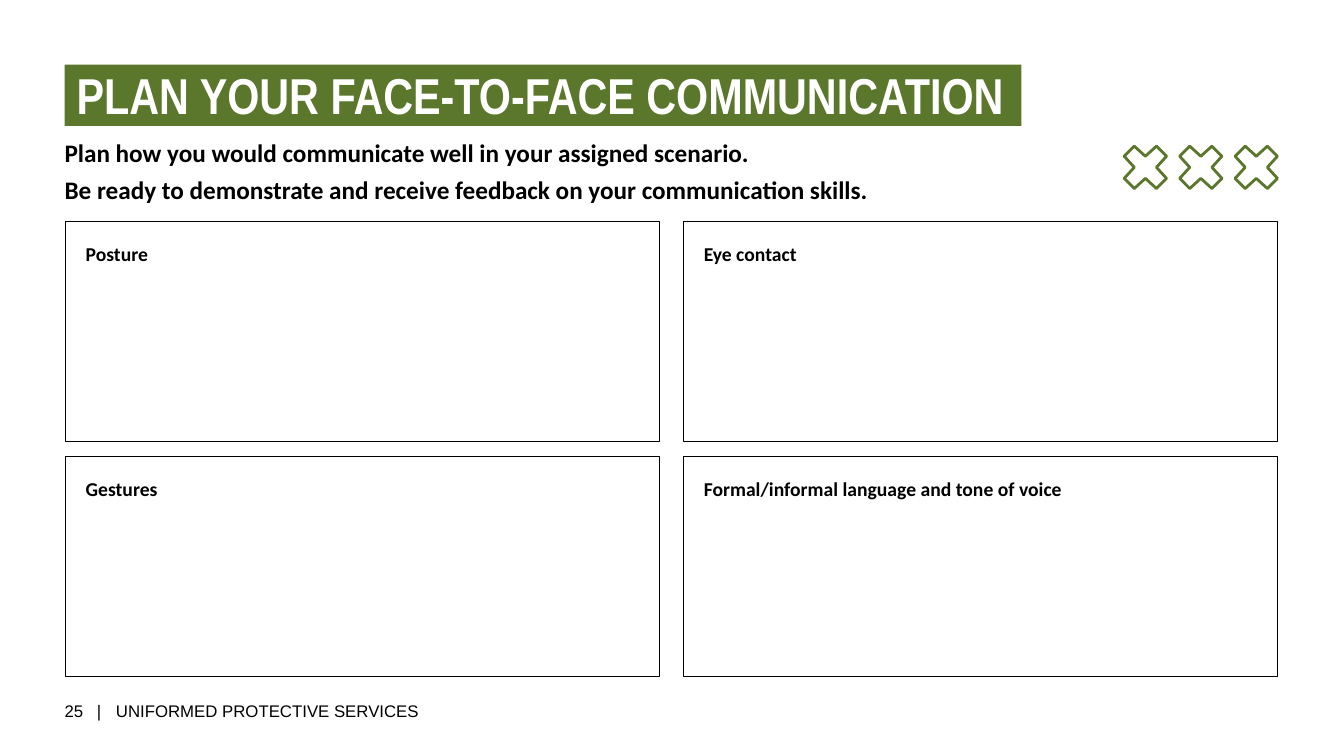
from pptx import Presentation, util as u
from pptx.dml.color import RGBColor
from pptx.enum import shapes, text
from lxml import etree

Inches, Pt = u.Inches, u.Pt
A_NS = "{http://schemas.openxmlformats.org/drawingml/2006/main}"


def colour(hex_code):
    return RGBColor.from_string(hex_code)


class Worksheet:
    GREEN, BLACK, WHITE = "5B772B", "000000", "FFFFFF"
    HEADING, BODY, FOOTER = "Arial Narrow", "Calibri", "Arial"

    def __init__(self, slide):
        self.slide = slide

    def set_text(self, shape, lines, font, size, ink, bold=True, insets=(0, 0, 0, 0),
                 after=0, anchor=text.MSO_ANCHOR.TOP, wrap=True, grow=False, tabs=()):
        frame = shape.text_frame
        frame.word_wrap = wrap
        frame.auto_size = (text.MSO_AUTO_SIZE.SHAPE_TO_FIT_TEXT if grow
                           else text.MSO_AUTO_SIZE.NONE)
        frame.vertical_anchor = anchor
        (frame.margin_left, frame.margin_top,
         frame.margin_right, frame.margin_bottom) = map(Inches, insets)
        for i, line in enumerate(lines):
            para = frame.add_paragraph() if i else frame.paragraphs[0]
            para.text = line
            para.alignment = text.PP_ALIGN.LEFT
            para.space_after = Pt(after)
            if tabs:
                stops = etree.SubElement(para._p.get_or_add_pPr(), A_NS + "tabLst")
                for stop in tabs:
                    etree.SubElement(stops, A_NS + "tab", pos=str(Inches(stop)), algn="l")
            para.font.name, para.font.size, para.font.bold = font, Pt(size), bold
            para.font.color.rgb = colour(ink)

    def textbox(self, at, lines, font, size, **style):
        box = self.slide.shapes.add_textbox(*map(Inches, at))
        self.set_text(box, lines, font, size, self.BLACK, grow=True, **style)

    def paint(self, shape, fill=None, line=None, width=1):
        shape.shadow.inherit = False
        if fill:
            shape.fill.solid()
            shape.fill.fore_color.rgb = colour(fill)
        else:
            shape.fill.background()
        if line:
            shape.line.color.rgb = colour(line)
            shape.line.width = Pt(width)
        else:
            shape.line.fill.background()

    def rectangle(self, at, **paint):
        rect = self.slide.shapes.add_shape(
            shapes.MSO_SHAPE.RECTANGLE, *map(Inches, at))
        self.paint(rect, **paint)
        return rect

    def banner(self, at, title):
        self.set_text(self.rectangle(at, fill=self.GREEN), [title], self.HEADING, 36,
                      self.WHITE, insets=(0.12, 0, 0.08, 0), wrap=False, grow=True)

    def answer_box(self, at, prompt):
        self.set_text(self.rectangle(at, line=self.BLACK), [prompt], self.BODY, 14,
                      self.BLACK, insets=(0.2,) * 4, after=5)

    def crosses(self, centres, y):
        # One quarter of a cross, turned four times
        quarter = [(0.11, 0), (0.21, 0.11), (0.11, 0.21)]
        outline = []
        for _ in range(4):
            outline += quarter
            quarter = [(-dy, dx) for dx, dy in quarter]
        builder = None
        for x in centres:
            points = [(Inches(x + dx), Inches(y + dy)) for dx, dy in outline]
            if builder is None:
                builder = self.slide.shapes.build_freeform(*points[0], scale=1.0)
            else:
                builder.move_to(*points[0])
            builder.add_line_segments(points[1:], close=True)
        self.paint(builder.convert_to_shape(), line=self.GREEN, width=2)


def main():
    prs = Presentation()
    prs.slide_width, prs.slide_height = Inches(13.33), Inches(7.5)
    sheet = Worksheet(prs.slides.add_slide(prs.slide_layouts[6]))

    # Footer
    sheet.textbox((0.64, 6.95, 3.82, 0.2), ["25\t|\tUNIFORMED PROTECTIVE SERVICES"],
                  sheet.FOOTER, 12, bold=False, anchor=text.MSO_ANCHOR.MIDDLE,
                  tabs=(0.32, 0.51))

    # Title and decoration
    sheet.banner((0.64, 0.64, 9.49, 0.61), "PLAN YOUR FACE-TO-FACE COMMUNICATION")
    sheet.crosses([11.36 + 0.55 * i for i in range(3)], 1.66)

    # Answer boxes, two by two
    prompts = ["Posture", "Eye contact",
               "Gestures", "Formal/informal language and tone of voice"]
    for i, prompt in enumerate(prompts):
        row, column = divmod(i, 2)
        sheet.answer_box((0.65 + 6.13 * column, 2.2 + 2.33 * row, 5.89, 2.18), prompt)

    # Instructions
    sheet.textbox((0.64, 1.36, 9.59, 0.68),
                  ["Plan how you would communicate well in your assigned scenario.",
                   "Be ready to demonstrate and receive feedback on your communication skills."],
                  sheet.BODY, 18, after=5)

    prs.save("out.pptx")


if __name__ == "__main__":
    main()
